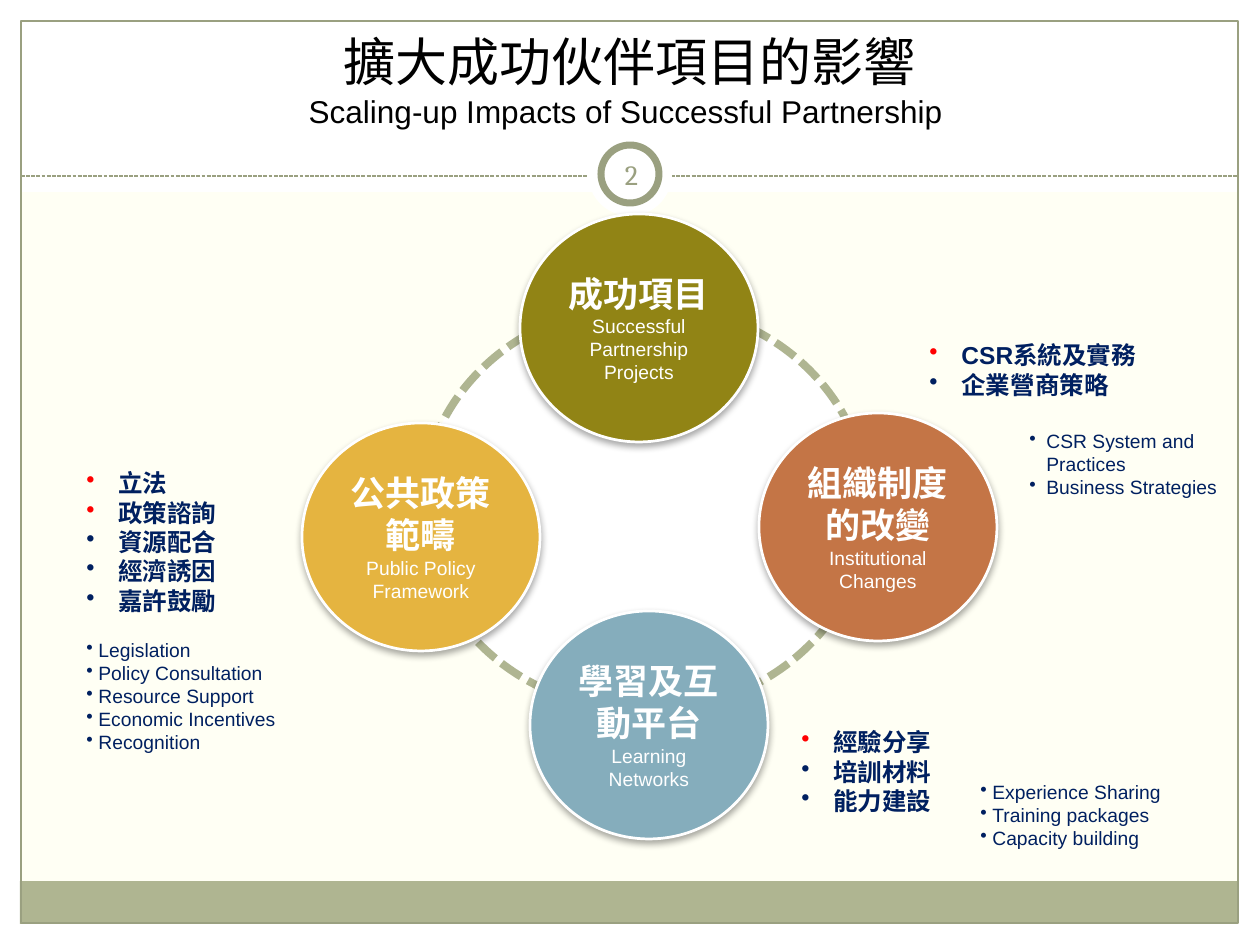
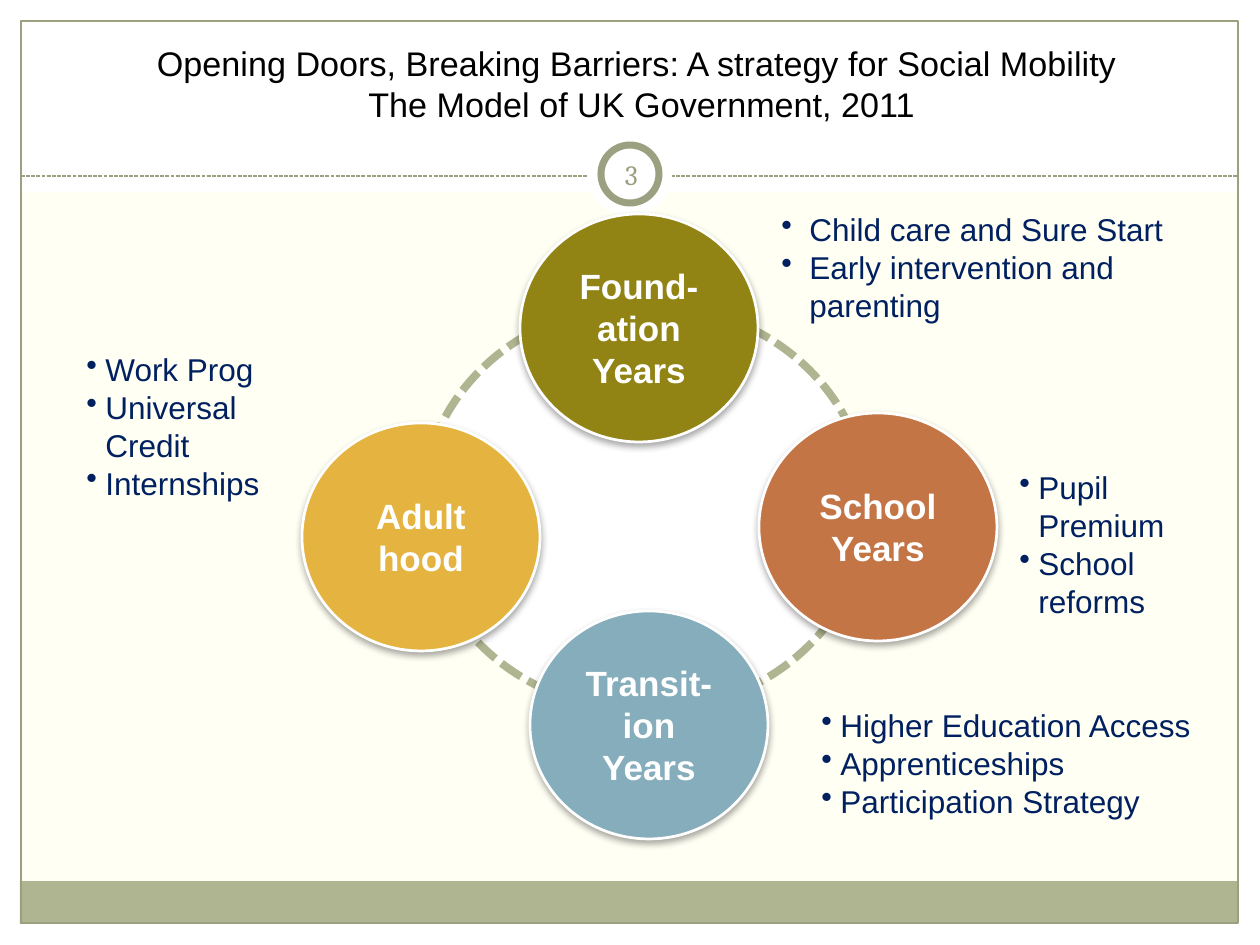
"""Build two slides that show partnership and social mobility as four-stage cycles."""
from dataclasses import dataclass
from typing import Optional

from lxml.etree import SubElement
from pptx import Presentation
from pptx.dml.color import RGBColor
from pptx.enum.dml import MSO_LINE
from pptx.enum.shapes import MSO_CONNECTOR, MSO_SHAPE
from pptx.enum.text import MSO_ANCHOR, MSO_AUTO_SIZE, PP_ALIGN
from pptx.oxml.ns import qn
from pptx.util import Emu, Pt

WHITE = RGBColor(0xFF, 0xFF, 0xFF)
BLACK = RGBColor(0x00, 0x00, 0x00)
IVORY = RGBColor(0xFF, 0xFF, 0xF4)
SAGE = RGBColor(0xAF, 0xB5, 0x91)
MOSS = RGBColor(0x9A, 0xA0, 0x80)
OLIVE = RGBColor(0x91, 0x84, 0x15)
STEEL = RGBColor(0x85, 0xAD, 0xBC)
RUST = RGBColor(0xC4, 0x75, 0x46)
AMBER = RGBColor(0xE5, 0xB4, 0x40)
NAVY = RGBColor(0x00, 0x20, 0x60)
RED = RGBColor(0xFF, 0x00, 0x00)

PX_PER_INCH = 126
PAGE_W, PAGE_H = 1260, 945
EDGE = 21
HEADER_H = 192
RULE_Y = 176
STAGE_W, STAGE_H = 238, 228
GROUP_GAP = 13
SANS, SERIF = "Arial", "Cambria"


@dataclass(frozen=True)
class Box:
    left: int
    top: int
    width: int
    height: int


@dataclass(frozen=True)
class Outline:
    color: RGBColor
    points: float
    dash: Optional[MSO_LINE] = None


@dataclass(frozen=True)
class Panel:
    kind: MSO_SHAPE
    box: Box
    fill: Optional[RGBColor] = None
    outline: Optional[Outline] = None


@dataclass(frozen=True)
class Spot:
    left: int
    top: int
    color: RGBColor


@dataclass(frozen=True)
class Stage:
    heading: str
    caption: str = ""


@dataclass(frozen=True)
class Group:
    items: tuple[str, ...]
    size: int
    hang: int
    bold: bool = False
    red_bullets: int = 0


@dataclass(frozen=True)
class Notes:
    box: Box
    groups: tuple[Group, ...]


@dataclass(frozen=True)
class TitleLine:
    text: str
    size: float
    font: str


@dataclass(frozen=True)
class Cycle:
    number: int
    title_box: Box
    title: tuple[TitleLine, ...]
    stages: tuple[Stage, ...]
    notes: tuple[Notes, ...]


FRAME = (
    Panel(MSO_SHAPE.RECTANGLE, Box(0, PAGE_H - EDGE, PAGE_W, EDGE), WHITE),
    Panel(MSO_SHAPE.RECTANGLE, Box(0, 0, PAGE_W, HEADER_H), WHITE),
    Panel(MSO_SHAPE.RECTANGLE, Box(0, 0, EDGE, PAGE_H), WHITE),
    Panel(MSO_SHAPE.RECTANGLE, Box(PAGE_W - EDGE, 0, EDGE, PAGE_H), WHITE),
    Panel(MSO_SHAPE.RECTANGLE, Box(20, 881, 1217, 43), SAGE),
    Panel(MSO_SHAPE.RECTANGLE, Box(EDGE, EDGE, 1217, 902), None, Outline(MOSS, 0.75)),
)
BADGE = (
    Panel(MSO_SHAPE.OVAL, Box(588, 132, 84, 84), WHITE),
    Panel(MSO_SHAPE.OVAL, Box(601, 145, 58, 58), WHITE, Outline(MOSS, 4)),
)
NUMBER_BOX = Box(600, 145, 63, 59)
RING = Panel(MSO_SHAPE.OVAL, Box(422, 304, 446, 407), WHITE,
             Outline(SAGE, 4.5, MSO_LINE.SQUARE_DOT))
SPOTS = (
    Spot(520, 214, OLIVE),
    Spot(530, 611, STEEL),
    Spot(759, 413, RUST),
    Spot(302, 423, AMBER),
)

CYCLES = (
    Cycle(
        2, Box(42, 31, 1176, 105),
        (TitleLine("擴大成功伙伴項目的影響", 29.7, SERIF),
         TitleLine("Scaling-up Impacts of Successful Partnership ", 18, SANS)),
        (Stage("成功項目", "Successful Partnership Projects"),
         Stage("學習及互動平台", "Learning Networks"),
         Stage("組織制度\n的改變", "Institutional Changes"),
         Stage("公共政策範疇", "Public Policy Framework")),
        (Notes(Box(789, 721, 248, 102),
               (Group(("經驗分享", "培訓材料", "能力建設"), 14, 32, True, 1),)),
         Notes(Box(917, 334, 248, 72),
               (Group(("CSR系統及實務", "企業營商策略"), 14, 32, True, 1),)),
         Notes(Box(74, 462, 248, 301),
               (Group(("立法", "政策諮詢", "資源配合", "經濟誘因", "嘉許鼓勵"),
                      14, 32, True, 2),
                Group(("Legislation", "Policy Consultation", "Resource Support",
                       "Economic Incentives", "Recognition"), 11, 12))),
         Notes(Box(1017, 423, 222, 130),
               (Group(("CSR System and\vPractices", "Business Strategies"), 11, 17),)),
         Notes(Box(968, 774, 266, 106),
               (Group(("Experience Sharing", "Training packages",
                       "Capacity building"), 11, 12),))),
    ),
    Cycle(
        3, Box(54, 26, 1176, 105),
        (TitleLine("Opening Doors, Breaking Barriers: A strategy for Social Mobility ",
                   19.5, SANS),
         TitleLine("The Model of UK Government, 2011", 19.5, SANS)),
        (Stage("Found-\nation Years"), Stage("Transit-\nion Years"),
         Stage("School Years"), Stage("Adult\nhood")),
        (Notes(Box(74, 344, 248, 165),
               (Group(("Work Prog", "Universal\vCredit", "Internships"), 18, 19),)),
         Notes(Box(769, 204, 470, 130),
               (Group(("Child care and Sure Start",
                       "Early intervention and\vparenting"), 18, 28),)),
         Notes(Box(1007, 462, 192, 165),
               (Group(("Pupil\vPremium", "School\vreforms"), 18, 19),)),
         Notes(Box(809, 700, 427, 130),
               (Group(("Higher Education Access", "Apprenticeships",
                       "Participation Strategy"), 18, 19),))),
    ),
)


def px(length: int) -> Emu:
    """Turn pixels into EMU."""
    return Emu(round(length * 914400 / PX_PER_INCH))


def place(box: Box) -> tuple[Emu, ...]:
    """Give the position and size of a box in EMU."""
    return px(box.left), px(box.top), px(box.width), px(box.height)


def style_line(line, outline: Outline) -> None:
    """Apply colour, weight and dash to a line."""
    line.color.rgb = outline.color
    line.width = Pt(outline.points)
    if outline.dash is not None:
        line.dash_style = outline.dash


def style_runs(paragraph, font: str, size: float, color: RGBColor, bold: bool = False) -> None:
    """Format every run of a paragraph alike."""
    for run in paragraph.runs:
        run.font.name = font
        run.font.size = Pt(size)
        run.font.bold = bold
        run.font.color.rgb = color


def draw_panel(slide, panel: Panel):
    """Draw a plain shape without shadow."""
    shape = slide.shapes.add_shape(panel.kind, *place(panel.box))
    shape.shadow.inherit = False
    if panel.fill is None:
        shape.fill.background()
    else:
        shape.fill.solid()
        shape.fill.fore_color.rgb = panel.fill
    if panel.outline is None:
        shape.line.fill.background()
    else:
        style_line(shape.line, panel.outline)
    return shape


def draw_frame(slide, layout) -> None:
    """Draw the bands, rule and badge and hand them to the layout."""
    parts = [draw_panel(slide, panel) for panel in FRAME]
    rule = slide.shapes.add_connector(MSO_CONNECTOR.STRAIGHT, px(EDGE), px(RULE_Y),
                                      px(PAGE_W - EDGE), px(RULE_Y))
    style_line(rule.line, Outline(MOSS, 0.75, MSO_LINE.SQUARE_DOT))
    SubElement(rule.element.spPr, qn("a:effectLst"))
    parts.append(rule)
    parts += [draw_panel(slide, panel) for panel in BADGE]
    for part_id, part in enumerate(parts, 100):
        part.element.xpath(".//p:cNvPr")[0].set("id", str(part_id))
        layout.shapes.element.append(part.element)


def write_title(slide, cycle: Cycle) -> None:
    """Move and fill the title placeholder."""
    title = slide.shapes.title
    title.left, title.top, title.width, title.height = place(cycle.title_box)
    frame = title.text_frame
    frame.text = "\n".join(line.text for line in cycle.title)
    frame.auto_size = MSO_AUTO_SIZE.NONE
    frame.vertical_anchor = MSO_ANCHOR.BOTTOM
    for paragraph, line in zip(frame.paragraphs, cycle.title):
        paragraph.alignment = PP_ALIGN.CENTER
        style_runs(paragraph, line.font, line.size, BLACK)


def write_number(slide, number: int) -> None:
    """Write the slide number inside the badge."""
    frame = slide.shapes.add_textbox(*place(NUMBER_BOX)).text_frame
    frame.word_wrap = True
    frame.vertical_anchor = MSO_ANCHOR.MIDDLE
    frame.margin_left = frame.margin_right = frame.margin_top = frame.margin_bottom = px(6)
    frame.text = str(number)
    frame.paragraphs[0].alignment = PP_ALIGN.CENTER
    style_runs(frame.paragraphs[0], SERIF, 16, MOSS)


def draw_stage(slide, spot: Spot, stage: Stage) -> None:
    """Draw one stage of the cycle with a soft shadow."""
    circle = draw_panel(slide, Panel(MSO_SHAPE.OVAL, Box(spot.left, spot.top, STAGE_W, STAGE_H),
                                     spot.color, Outline(WHITE, 1.57)))
    effects = circle.element.spPr.find(qn("a:effectLst"))
    shadow = SubElement(effects, qn("a:outerShdw"), blurRad=str(Pt(4)), dist=str(Pt(2)),
                        dir="5400000", rotWithShape="0")
    tint = SubElement(shadow, qn("a:srgbClr"), val=str(BLACK))
    SubElement(tint, qn("a:alpha"), val="35000")
    frame = circle.text_frame
    frame.word_wrap = True
    frame.vertical_anchor = MSO_ANCHOR.MIDDLE
    headings = stage.heading.split("\n")
    frame.text = "\n".join(headings + ([stage.caption] if stage.caption else []))
    for row, paragraph in enumerate(frame.paragraphs):
        is_heading = row < len(headings)
        paragraph.alignment = PP_ALIGN.CENTER
        style_runs(paragraph, SANS, 20 if is_heading else 11, WHITE, is_heading)


def add_bullet(paragraph, hang: int, color: RGBColor) -> None:
    """Give a paragraph a coloured bullet and a hanging indent."""
    properties = paragraph._p.get_or_add_pPr()
    properties.set("marL", str(px(hang)))
    properties.set("indent", str(-px(hang)))
    SubElement(SubElement(properties, qn("a:buClr")), qn("a:srgbClr"), val=str(color))
    SubElement(properties, qn("a:buChar"), char="•")


def write_notes(slide, notes: Notes) -> None:
    """Write the bulleted groups that explain a stage."""
    frame = slide.shapes.add_textbox(*place(notes.box)).text_frame
    frame.word_wrap = True
    frame.text = "\n".join(item for group in notes.groups for item in group.items)
    paragraphs = iter(frame.paragraphs)
    for group_index, group in enumerate(notes.groups):
        for row, paragraph in zip(range(len(group.items)), paragraphs):
            if group_index and row == 0:
                paragraph.space_before = Pt(GROUP_GAP)
            add_bullet(paragraph, group.hang, RED if row < group.red_bullets else NAVY)
            style_runs(paragraph, SANS, group.size, NAVY, group.bold)


def main() -> None:
    """Build and save the presentation."""
    deck = Presentation()
    deck.slide_width, deck.slide_height = px(PAGE_W), px(PAGE_H)
    layout = deck.slide_layouts[5]
    layout.background.fill.solid()
    layout.background.fill.fore_color.rgb = IVORY
    for index, cycle in enumerate(CYCLES):
        slide = deck.slides.add_slide(layout)
        if index == 0:
            draw_frame(slide, layout)
        draw_panel(slide, RING)
        write_title(slide, cycle)
        write_number(slide, cycle.number)
        for spot, stage in zip(SPOTS, cycle.stages):
            draw_stage(slide, spot, stage)
        for notes in cycle.notes:
            write_notes(slide, notes)
    deck.save("out.pptx")


if __name__ == "__main__":
    main()
